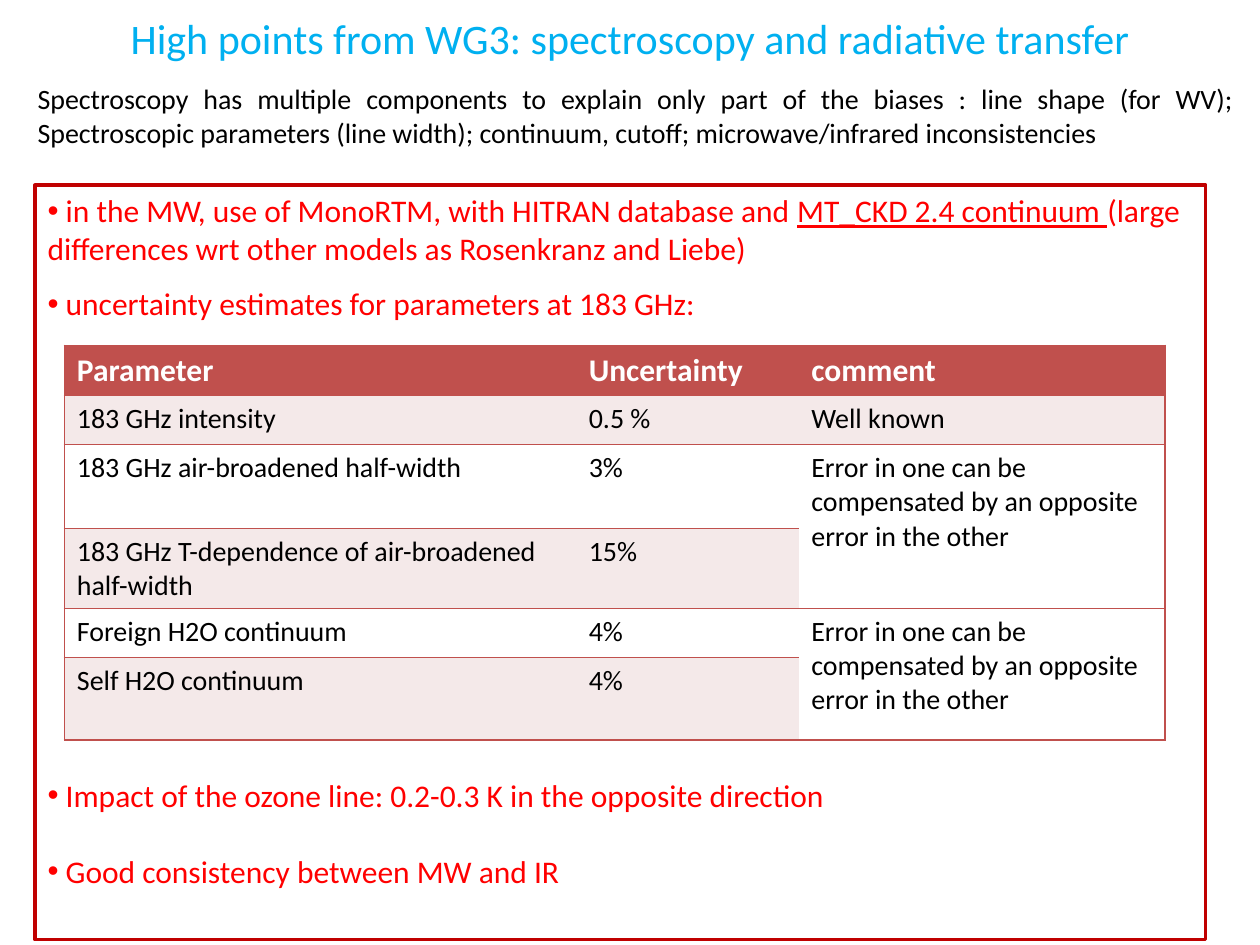
import pptx
import pptx.util
import pptx.dml.color
import pptx.enum.text
import pptx.oxml.ns
from lxml import etree

Pt = pptx.util.Pt
ALIGN = pptx.enum.text.PP_ALIGN
ANCHOR = pptx.enum.text.MSO_ANCHOR
FONT = "Calibri"
BRICK = "C0504D"

ERROR_NOTE = "Error in one can be compensated by an opposite error in the other"
BULLETS = [
    (0, [" in the MW, use of MonoRTM, with HITRAN database and ",
         "MT_CKD 2.4 continuum ",
         "(large differences wrt other models as Rosenkranz and Liebe)"]),
    (9.8, [" uncertainty estimates for parameters at 183 GHz:"]),
    (259.5, [" Impact of the ozone line: 0.2-0.3 K in the opposite direction"]),
    (21.5, [" Good consistency between MW and IR"]),
]
UNDERLINED = "MT_CKD 2.4 continuum "
ROWS = [
    ("Parameter", "Uncertainty", "comment"),
    ("183 GHz intensity", "0.5 %", "Well known"),
    ("183 GHz air-broadened half-width", "3%", ERROR_NOTE),
    ("183 GHz T-dependence of air-broadened half-width", "15%", None),
    ("Foreign H2O continuum", "4%", ERROR_NOTE),
    ("Self H2O continuum", "4%", None),
]
COL_WIDTHS = [292.5, 127.2, 209.3]
ROW_HEIGHTS = [28.4, 28, 48, 42, 28, 47.2]


def rgb(value):
    return pptx.dml.color.RGBColor.from_string(value)


def style(font, size, color, bold=False):
    font.name = FONT
    font.size = Pt(size)
    font.bold = bold
    font.color.rgb = rgb(color)


def place(sp, box):
    sp.left, sp.top, sp.width, sp.height = [Pt(v) for v in box]


def sub(parent, tag, **attrs):
    return etree.SubElement(parent, pptx.oxml.ns.qn(tag), **attrs)


def add_title(s, box):
    sp = s.shapes.title
    place(sp, box)
    tf = sp.text_frame
    tf.text = "High points from WG3: spectroscopy and radiative transfer"
    tf.vertical_anchor = ANCHOR.MIDDLE
    tf.auto_size = pptx.enum.text.MSO_AUTO_SIZE.NONE
    tf.paragraphs[0].alignment = ALIGN.CENTER
    style(tf.paragraphs[0].runs[0].font, 24, "00B0F0")


def add_intro(s, box):
    sp = s.shapes.add_textbox(*[Pt(v) for v in box])
    tf = sp.text_frame
    tf.word_wrap = True
    tf.text = ("Spectroscopy has multiple components to explain only part of the "
               "biases : line shape (for WV); Spectroscopic parameters (line width); "
               "continuum, cutoff; microwave/infrared inconsistencies")
    tf.paragraphs[0].alignment = ALIGN.JUSTIFY
    style(tf.paragraphs[0].runs[0].font, 16, "000000")


def add_findings(s, box):
    sp = s.placeholders[1]
    place(sp, box)
    sp.line.color.rgb = rgb("C00000")
    sp.line.width = Pt(2)
    tf = sp.text_frame
    tf.vertical_anchor = ANCHOR.TOP
    tf.auto_size = pptx.enum.text.MSO_AUTO_SIZE.NONE
    for i, (gap, parts) in enumerate(BULLETS):
        p = tf.paragraphs[0] if i == 0 else tf.add_paragraph()
        p.space_before = Pt(gap)
        pPr = p._p.get_or_add_pPr()
        pPr.set("marL", "0")
        pPr.set("indent", "0")
        sub(pPr, "a:buFont", typeface="Arial")
        sub(pPr, "a:buChar", char="•")
        for part in parts:
            r = p.add_run()
            r.text = part
            style(r.font, 18, "FF0000")
            if part == UNDERLINED:
                r.font.underline = True


def set_borders(cell, sides):
    tcPr = cell._tc.get_or_add_tcPr()
    for side in "LRTB":
        if side in sides:
            ln = sub(tcPr, "a:ln" + side, w=str(Pt(1)))
            sub(sub(ln, "a:solidFill"), "a:srgbClr", val=BRICK)
        else:
            sub(sub(tcPr, "a:ln" + side, w="0"), "a:noFill")


def add_uncertainty_table(s, box):
    table = s.shapes.add_table(len(ROWS), len(COL_WIDTHS), *[Pt(v) for v in box]).table
    for column, width in zip(table.columns, COL_WIDTHS):
        column.width = Pt(width)
    for row, height in zip(table.rows, ROW_HEIGHTS):
        row.height = Pt(height)
    for top in (2, 4):
        table.cell(top, 2).merge(table.cell(top + 1, 2))
    for i, row in enumerate(ROWS):
        for j, text in enumerate(row):
            cell = table.cell(i, j)
            sides = "B" if cell.is_spanned else "TB"
            set_borders(cell, {0: "L", 1: "", 2: "R"}[j] + sides)
            banded = i % 2 == 1 and not cell.is_spanned
            cell.fill.solid()
            cell.fill.fore_color.rgb = rgb(
                BRICK if i == 0 else "F4E9E9" if banded else "FFFFFF")
            if text:
                cell.text_frame.text = text
                font = cell.text_frame.paragraphs[0].runs[0].font
                if i == 0:
                    style(font, 18, "FFFFFF", bold=True)
                else:
                    style(font, 16, "000000")


def main():
    prs = pptx.Presentation()
    prs.slide_width, prs.slide_height = Pt(720), Pt(540)
    s = prs.slides.add_slide(prs.slide_layouts[1])
    add_title(s, (0, 3.6, 720, 36))
    add_intro(s, (14.4, 43.2, 697.7, 67.7))
    add_findings(s, (20, 105.8, 669, 431.2))
    add_uncertainty_table(s, (36.8, 197.3, sum(COL_WIDTHS), sum(ROW_HEIGHTS)))
    prs.save("out.pptx")


if __name__ == "__main__":
    main()
